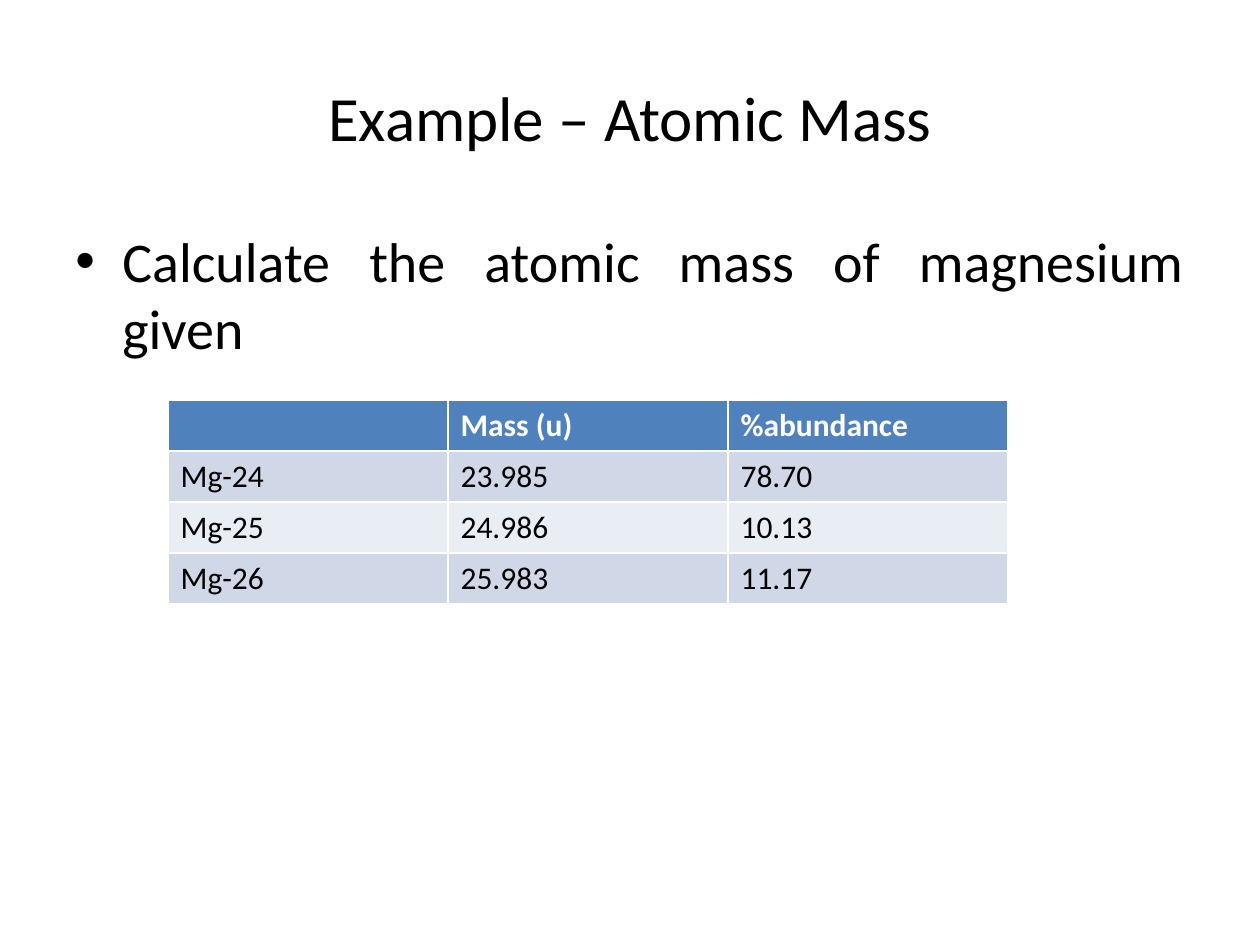
from dataclasses import dataclass

from lxml import etree
from pptx import Presentation, util as u
from pptx.dml.color import RGBColor
from pptx.enum import text as t
from pptx.oxml import ns

PX_PER_INCH = 126
FONT = "Calibri"
BLACK, WHITE = "000000", "FFFFFF"
HEADER_FILL = "4F81BD"
BAND_FILLS = ("D0D8E8", "E9EDF4")


@dataclass(frozen=True)
class Box:
    left: int
    top: int
    width: int
    height: int

    def emu(self) -> tuple:
        return tuple(px(n) for n in (self.left, self.top, self.width, self.height))


@dataclass(frozen=True)
class Isotope:
    label: str
    mass: str
    abundance: str


TITLE_BOX = Box(63, 38, 1134, 157)
QUESTION_BOX = Box(63, 220, 1134, 624)
TABLE_BOX = Box(168, 400, 840, 204)

HEADINGS = ("", "Mass (u)", "%abundance")
ISOTOPES = (
    Isotope("Mg-24", "23.985", "78.70"),
    Isotope("Mg-25", "24.986", "10.13"),
    Isotope("Mg-26", "25.983", "11.17"),
)


def px(n: int) -> u.Emu:
    return u.Emu(round(n * u.Inches(1) / PX_PER_INCH))


def color(value: str) -> RGBColor:
    return RGBColor.from_string(value)


def add_run(paragraph, words: str, size: int, ink: str = BLACK, bold: bool = False) -> None:
    run = paragraph.add_run()
    run.text = words
    run.font.name = FONT
    run.font.size = u.Pt(size)
    run.font.bold = bold
    run.font.color.rgb = color(ink)


def add_bullet(paragraph, indent: int) -> None:
    properties = paragraph._p.get_or_add_pPr()
    properties.set("marL", str(px(indent)))
    properties.set("indent", str(-px(indent)))
    etree.SubElement(properties, ns.qn("a:buFont"), typeface="Arial")
    etree.SubElement(properties, ns.qn("a:buChar"), char="•")


def fill_row(row, words: tuple, fill: str, ink: str, bold: bool) -> None:
    for cell, entry in zip(row.cells, words):
        cell.fill.solid()
        cell.fill.fore_color.rgb = color(fill)
        if entry:
            add_run(cell.text_frame.paragraphs[0], entry, 18, ink, bold)


def add_title(slide) -> None:
    title = slide.shapes.title
    title.left, title.top, title.width, title.height = TITLE_BOX.emu()
    title.text_frame.vertical_anchor = t.MSO_ANCHOR.MIDDLE
    heading = title.text_frame.paragraphs[0]
    heading.alignment = t.PP_ALIGN.CENTER
    add_run(heading, "Example – Atomic Mass", 36)


def add_question(slide) -> None:
    frame = slide.shapes.add_textbox(*QUESTION_BOX.emu()).text_frame
    frame.word_wrap = True
    question = frame.paragraphs[0]
    question.alignment = t.PP_ALIGN.JUSTIFY
    add_bullet(question, 47)
    add_run(question, "Calculate the atomic mass of magnesium given", 32)


def add_isotope_table(slide) -> None:
    # The default table style supplies the white cell borders
    table = slide.shapes.add_table(
        len(ISOTOPES) + 1, len(HEADINGS), *TABLE_BOX.emu()
    ).table
    header, *body = table.rows
    fill_row(header, HEADINGS, HEADER_FILL, WHITE, True)
    for i, (row, isotope) in enumerate(zip(body, ISOTOPES)):
        values = (isotope.label, isotope.mass, isotope.abundance)
        fill_row(row, values, BAND_FILLS[i % 2], BLACK, False)


def main() -> None:
    deck = Presentation()
    deck.slide_width, deck.slide_height = px(1260), px(945)
    slide = deck.slides.add_slide(deck.slide_layouts[5])  # title only
    add_title(slide)
    add_question(slide)
    add_isotope_table(slide)
    deck.save("out.pptx")


if __name__ == "__main__":
    main()
